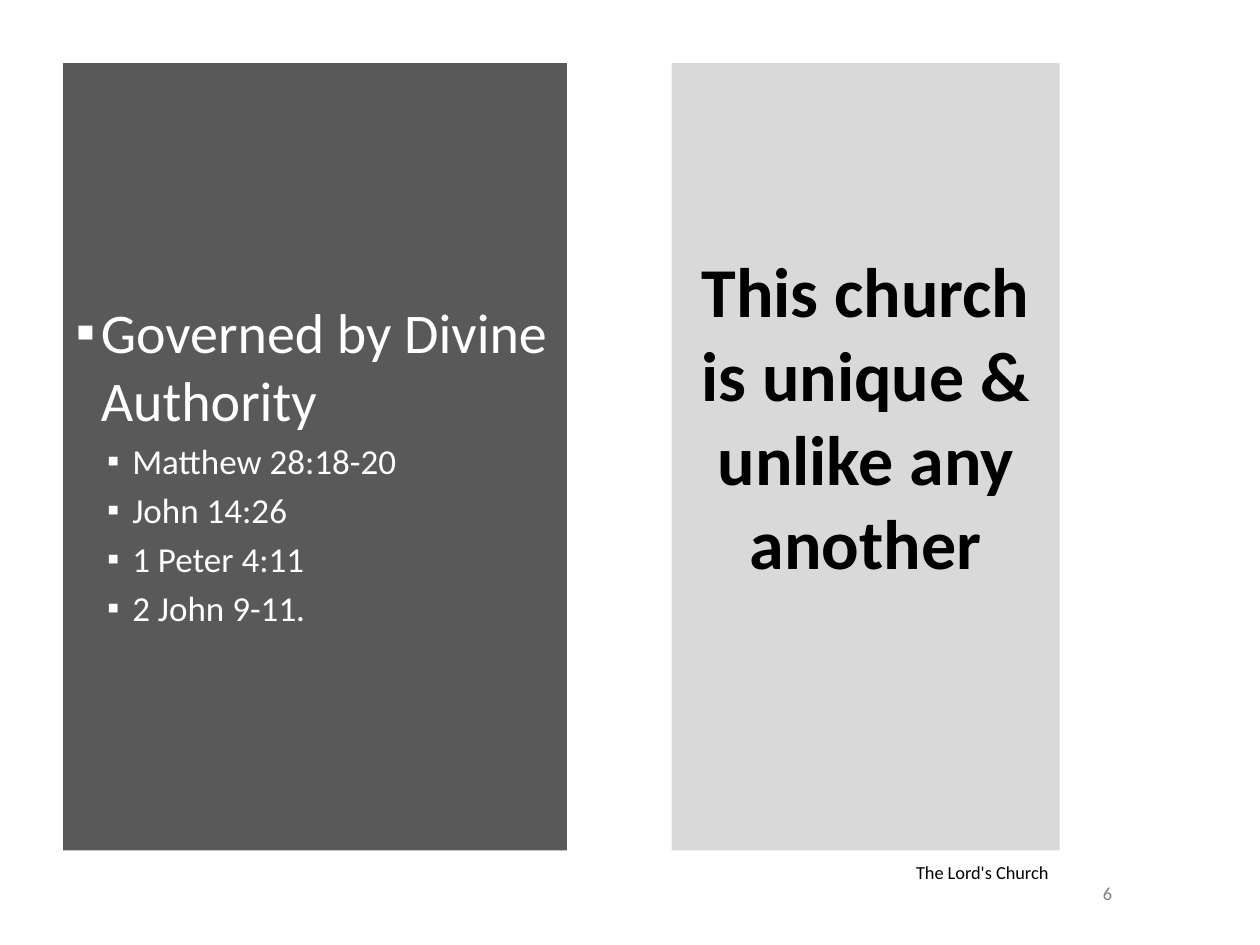
import pptx
import pptx.util
import pptx.dml.color
import pptx.enum.text
import pptx.oxml
import pptx.oxml.ns
import lxml.etree

In, Pt = pptx.util.Inches, pptx.util.Pt
ALIGN, ANCHOR = pptx.enum.text.PP_ALIGN, pptx.enum.text.MSO_ANCHOR
FONT = "Calibri"

# Content: (level, text)
TITLE = "This church is unique & unlike any another"
POINTS = [
    (0, "Governed by Divine Authority"),
    (1, "Matthew 28:18-20"),
    (1, "John 14:26"),
    (1, "1 Peter 4:11"),
    (1, "2 John 9-11."),
]
# Per level: text size in points, left indent in inches
LEVELS = [(32, 0.2), (20, 0.45)]
HANGING = 0.2
# Small texts: text, box, alignment, anchor, colour
SMALL = [
    ("6", (8.5, 7, 0.58, 0.17), ALIGN.CENTER, ANCHOR.MIDDLE, "808080"),
    ("The Lord's Church", (5.33, 6.89, 3.09, 0.17), ALIGN.RIGHT, ANCHOR.BOTTOM, "000000"),
]
# Both panels share one row
TOP, HEIGHT = 0.5, 6.25
BODY_BOX = (0.5, TOP, 4, HEIGHT)
TITLE_BOX = (5.33, TOP, 3.08, HEIGHT)


def color(hex_text):
    return pptx.dml.color.RGBColor.from_string(hex_text)


def place(sp, box):
    sp.left, sp.top, sp.width, sp.height = [In(v) for v in box]


def frame(sp, anchor):
    tf = sp.text_frame
    tf.word_wrap = True
    tf.auto_size = pptx.enum.text.MSO_AUTO_SIZE.NONE
    tf.vertical_anchor = anchor
    return tf


def panel(sp, box, fill):
    place(sp, box)
    sp.fill.solid()
    sp.fill.fore_color.rgb = color(fill)
    return frame(sp, ANCHOR.MIDDLE)


def add_run(p, text, size, hex_text, bold=False):
    r = p.add_run()
    r.text = text
    r.font.name, r.font.size, r.font.bold = FONT, Pt(size), bold
    r.font.color.rgb = color(hex_text)


def add_bullet(p, left):
    pPr = p._p.get_or_add_pPr()
    pPr.set("marL", str(In(left)))
    pPr.set("indent", str(-In(HANGING)))
    qn = pptx.oxml.ns.qn
    clr = lxml.etree.SubElement(pPr, qn("a:buClr"))
    lxml.etree.SubElement(clr, qn("a:srgbClr"), val="FFFFFF")
    lxml.etree.SubElement(pPr, qn("a:buFont"), typeface="Arial")
    lxml.etree.SubElement(pPr, qn("a:buChar"), char="▪")


prs = pptx.Presentation()
prs.slide_width, prs.slide_height = In(10), In(7.5)
s = prs.slides.add_slide(prs.slide_layouts[1])

# Dark panel with the list
tf = panel(s.placeholders[1], BODY_BOX, "595959")
tf.margin_top = In(0.15)
for i, (level, text) in enumerate(POINTS):
    size, left = LEVELS[level]
    p = tf.add_paragraph() if i else tf.paragraphs[0]
    p.level = level
    add_bullet(p, left)
    p.space_before = Pt(0.2 * size if i else 0)
    add_run(p, text, size, "FFFFFF")

# Light panel with the title, raised above the middle
tf = panel(s.shapes.title, TITLE_BOX, "D9D9D9")
tf.margin_bottom = In(0.7)
p = tf.paragraphs[0]
p.alignment = ALIGN.CENTER
add_run(p, TITLE, 40, "000000", bold=True)

# Slide number and footer
for text, box, align, anchor, hex_text in SMALL:
    sp = s.shapes.add_textbox(*[In(v) for v in box])
    p = frame(sp, anchor).paragraphs[0]
    p.alignment = align
    add_run(p, text, 10.5, hex_text)

prs.save("out.pptx")
